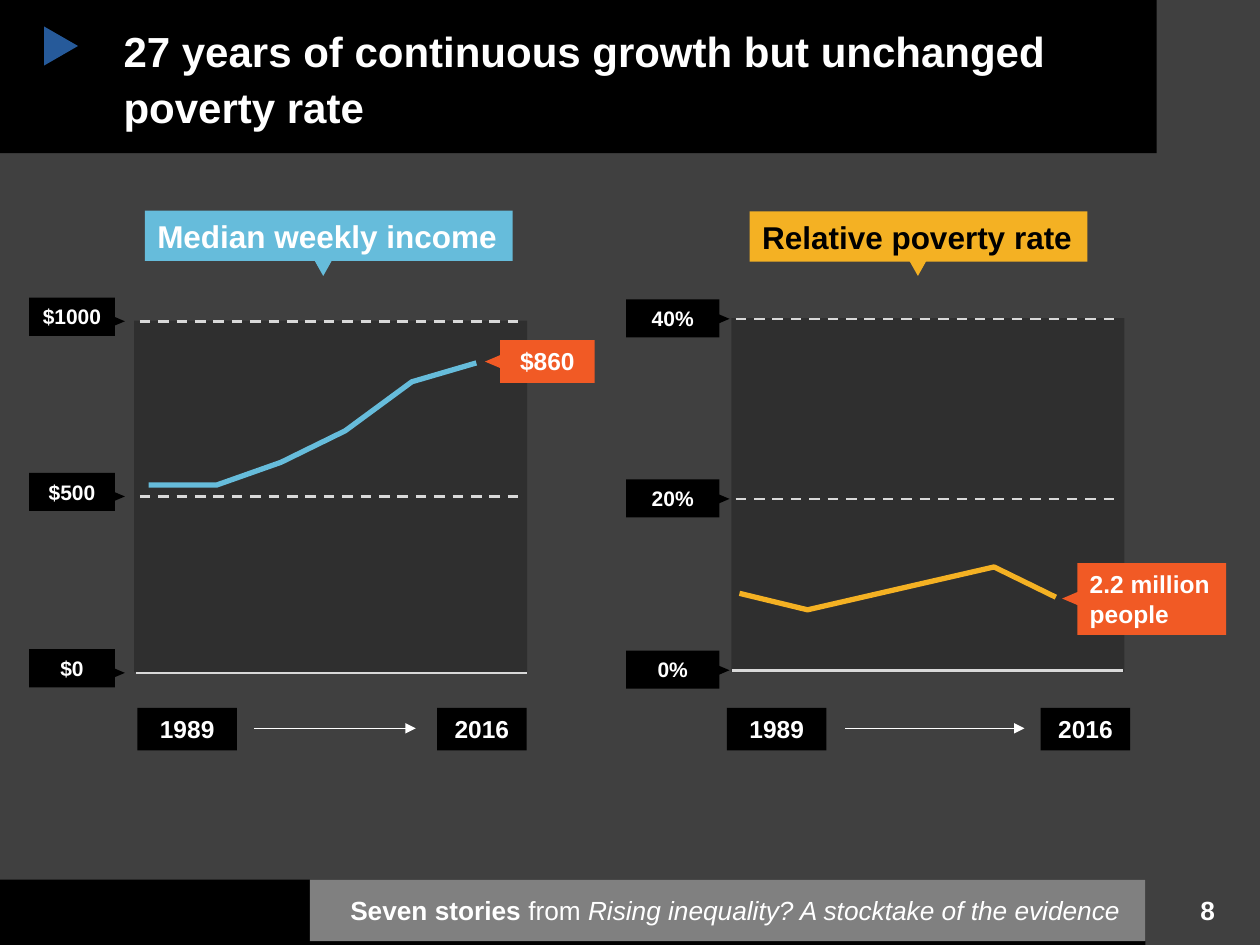
from lxml import etree
from pptx import Presentation
from pptx.dml.color import RGBColor
from pptx.enum import dml, shapes, text
from pptx.oxml import ns
from pptx.util import Pt

COLORS = {
    "page": "404040", "black": "000000", "white": "FFFFFF", "grid": "D9D9D9",
    "blue": "66BCDB", "yellow": "F4B123", "orange": "F15A25",
    "marker": "265A9A", "footer": "808080",
}
FONT = "Arial"
TITLE = "27 years of continuous growth but unchanged poverty rate"
FOOTER = [("Seven stories ", True, False), ("from ", False, False),
          ("Rising inequality? A stocktake of the evidence", False, True)]

# Boxes are (left, top, width, height); all lengths are points.
PANELS = [
    {
        "plot": (76.7, 183.2, 224.6, 200.9), "axis_left": 77.8,
        "heading": ("Median weekly income", "blue", "white", (82.8, 120.4, 210.2, 28.8), 184.7),
        "ticks": [("$1000", 183.6), ("$500", 283.7), ("$0", 384.5)],
        "tick_box": (16.6, 49, 13.5),  # left, width, rise above its grid line
        "trend": [(85, 277.2), (123.8, 277.2), (160.6, 264.2), (197.3, 246.2),
                  (235.4, 218.2), (272.2, 207.4)],
        "callout": ("$860", (285.8, 194.4, 54, 24.5), 206.6, "CENTER"),
        "years": [("1989", 78.5, 56.9), ("2016", 249.8, 51.1)],
        "arrow": (145.4, 237.6),
    },
    {
        "plot": (418, 181.8, 224.6, 202.3), "axis_left": 418.3,
        "heading": ("Relative poverty rate", "yellow", "black", (428.4, 120.8, 193, 28.8), 524.5),
        "ticks": [("40%", 182.2), ("20%", 285.1), ("0%", 383)],
        "tick_box": (357.8, 53.3, 11.2),
        "trend": [(422.6, 339.1), (461.5, 348.5), (568.1, 324), (603.4, 341.3)],
        "callout": ("2.2 million people", (615.6, 321.8, 85, 41), 342, "LEFT"),
        "years": [("1989", 415.4, 56.9), ("2016", 594.7, 51.1)],
        "arrow": (483.1, 585.4),
    },
]


def rgb(name):
    return RGBColor.from_string(COLORS[name])


def add_block(frame, color, kind="RECTANGLE", rotation=0):
    box = page.shapes.add_shape(shapes.MSO_SHAPE[kind], *map(Pt, frame))
    box.shadow.inherit = False
    box.fill.solid()
    box.fill.fore_color.rgb = rgb(color)
    box.line.fill.background()
    box.rotation = rotation
    return box


def add_pointer(center, size, color, rotation):
    (x, y), (width, height) = center, size
    add_block((x - width / 2, y - height / 2, width, height), color,
              "ISOSCELES_TRIANGLE", rotation)


def style(span, size, color="white", bold=True, italic=False):
    span.font.name, span.font.size = FONT, Pt(size)
    span.font.bold, span.font.italic = bold, italic
    span.font.color.rgb = rgb(color)


def write(box, words, size, color="white", align="CENTER", anchor="TOP", wrap=True):
    frame = box.text_frame
    frame.text = words
    frame.word_wrap = wrap
    frame.vertical_anchor = text.MSO_ANCHOR[anchor]
    para = frame.paragraphs[0]
    para.alignment = text.PP_ALIGN[align]
    for span in para.runs:
        style(span, size, color)
    return para


def set_insets(box, left, top, right, bottom):
    frame = box.text_frame
    frame.margin_left, frame.margin_top = Pt(left), Pt(top)
    frame.margin_right, frame.margin_bottom = Pt(right), Pt(bottom)


def add_line(x1, x2, y, color, width, dashed=False, arrow=False):
    line = page.shapes.add_connector(shapes.MSO_CONNECTOR.STRAIGHT,
                                     Pt(x1), Pt(y), Pt(x2), Pt(y))
    line.line.color.rgb = rgb(color)
    line.line.width = Pt(width)
    if dashed:
        line.line.dash_style = dml.MSO_LINE.DASH
    if arrow:
        etree.SubElement(line.line._get_or_add_ln(), ns.qn("a:tailEnd"), type="triangle")
    etree.SubElement(line._element.spPr, ns.qn("a:effectLst"))


def add_trend(points, color):
    start, *rest = [(Pt(x), Pt(y)) for x, y in points]
    builder = page.shapes.build_freeform(*start)
    builder.add_line_segments(rest, close=False)
    trend = builder.convert_to_shape()
    trend.shadow.inherit = False
    trend.fill.background()
    trend.line.color.rgb = rgb(color)
    trend.line.width = Pt(3)


def add_panel(panel):
    # Plot area, grid lines and trend
    plot = add_block(panel["plot"], "black")
    tint = plot._element.spPr.find(ns.qn("a:solidFill"))[0]
    etree.SubElement(tint, ns.qn("a:alpha"), val="25000")
    left = panel["axis_left"]
    *grid, (_, base) = panel["ticks"]
    add_line(left, left + 223.2, base, "grid", 1.5)
    for _, y in grid:
        add_line(left + 2.1, left + 221, y, "grid", 1.5, dashed=True)
    heading, color, ink, frame, tip_x = panel["heading"]
    add_trend(panel["trend"], color)

    # Value labels on the axis
    tick_left, width, rise = panel["tick_box"]
    for label, y in panel["ticks"]:
        write(add_block((tick_left, y - rise, width, 21.8), "black"), label, 12)
        add_pointer((tick_left + width + 0.7, y), (8.6, 10.1), "black", 90)

    # Heading and callout
    write(add_block(frame, color), heading, 18, ink, "LEFT", wrap=False)
    add_pointer((tip_x, 151.6), (13.7, 12.2), color, 180)
    label, frame, y, align = panel["callout"]
    write(add_block(frame, "orange"), label, 14, align=align)
    add_pointer((frame[0] - 3.6, y), (8.6, 10.1), "orange", 270)

    # Year range
    for year, x, width in panel["years"]:
        write(add_block((x, 404.6, width, 24.2), "black"), year, 14)
    add_line(*panel["arrow"], 416.2, "white", 0.75, arrow=True)


deck = Presentation()
deck.slide_width, deck.slide_height = Pt(720), Pt(540)
page = deck.slides.add_slide(deck.slide_layouts[6])
page.background.fill.solid()
page.background.fill.fore_color.rgb = rgb("page")

# Title band
title = add_block((0, 0, 661, 87.6), "black")
set_insets(title, 70.6, 11.5, 28.1, 11.5)
write(title, TITLE, 24, align="LEFT").line_spacing = Pt(32)
add_pointer((34.9, 26.3), (22.3, 19.4), "marker", 90)

for panel in PANELS:
    add_panel(panel)

# Footer and page number
add_block((0, 502.6, 654.5, 37.4), "black")
footer = add_block((177.1, 502.6, 477.4, 35.2), "footer")
set_insets(footer, 14.4, 8.6, 14.4, 8.6)
para = write(footer, "", 15, align="RIGHT")
for words, bold, italic in FOOTER:
    span = para.add_run()
    span.text = words
    style(span, 15, bold=bold, italic=italic)
number = page.shapes.add_textbox(Pt(660.2), Pt(500.4), Pt(59.8), Pt(39.6))
write(number, "8", 15, anchor="MIDDLE")

deck.save("out.pptx")
